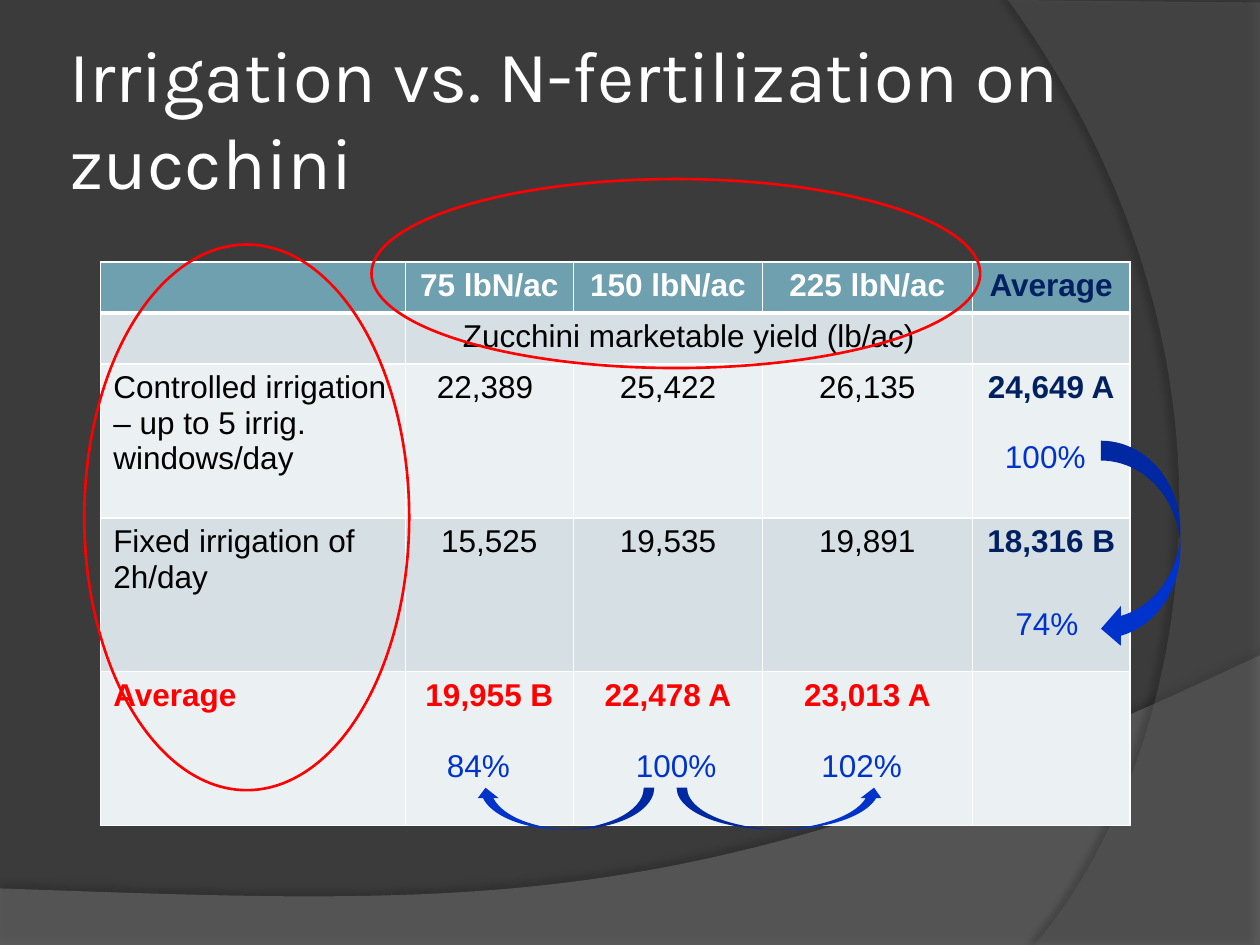
from pptx import Presentation, util as u
from pptx.dml import color
from pptx.enum import shapes, text
from pptx.oxml import parse_xml

SPACE = 'xmlns:a="http://schemas.openxmlformats.org/drawingml/2006/main"'
BLUE, RED, NAVY, BLACK, WHITE = "0033CC", "FF0000", "002060", "000000", "FFFFFF"
HEADER, DARK_BAND, LIGHT_BAND = "6EA0B0", "D5DFE4", "EBF0F2"


def rgb(value):
    """Turn a hex string into a colour."""
    return color.RGBColor.from_string(value)


def paint(fill, value):
    """Make a fill solid in one colour."""
    fill.solid()
    fill.fore_color.rgb = rgb(value)


def write(frame, words, ink, align=text.PP_ALIGN.LEFT, **formats):
    """Write one formatted span into a text frame."""
    para = frame.paragraphs[0]
    para.alignment = align
    span = para.add_run()
    span.text = words
    settings = {"name": "Arial", "size": u.Pt(18), "bold": False, **formats}
    for key, value in settings.items():
        setattr(span.font, key, value)
    span.font.color.rgb = rgb(ink)


def curve(start, first, second, end, steps=60):
    """Return points along a cubic curve, without its start."""
    points = []
    for step in range(1, steps + 1):
        t = step / steps
        weights = ((1 - t) ** 3, 3 * t * (1 - t) ** 2, 3 * t * t * (1 - t), t ** 3)
        points.append(tuple(
            sum(w * p[axis] for w, p in zip(weights, (start, first, second, end)))
            for axis in (0, 1)))
    return points


def add_swoosh(page, points, ink, opacity, shade, angle):
    """Draw a translucent background outline with a soft shadow."""
    start, *rest = [(u.Cm(x), u.Cm(y)) for x, y in points]
    builder = page.shapes.build_freeform(*start)
    builder.add_line_segments(rest, close=True)
    swoosh = builder.convert_to_shape()
    paint(swoosh.fill, ink)
    swoosh.line.fill.background()
    tint = swoosh.element.spPr.find(".//{*}solidFill/{*}srgbClr")
    tint.append(parse_xml(f'<a:alpha {SPACE} val="{opacity * 1000}"/>'))
    swoosh.element.spPr.append(parse_xml(
        f'<a:effectLst {SPACE}><a:outerShdw blurRad="{u.Pt(4)}" dist="{u.Pt(4)}" '
        f'dir="{angle * 60000}" algn="ctr" rotWithShape="0"><a:srgbClr val="{BLACK}">'
        f'<a:alpha val="{shade * 1000}"/></a:srgbClr></a:outerShdw></a:effectLst>'))


def add_backdrop(page, width, height):
    """Paint the background and its two swooshes."""
    paint(page.background.fill, "3B3B3B")
    right, left = (width, 13.21), (0, 17.91)
    wave = curve(right, (14.2, 18.52), (9.93, 18.26), left)
    add_swoosh(page, [left, (0, height), (width, height), right, *wave],
               "7F7F7F", 45, 35, 270)
    foot, top = (20.85, height), (20.32, 0)
    arc = curve(foot, (23.75, 15.72), (25.86, 7.62), top)
    add_swoosh(page, [(width, 0.05), (width, height), foot, *arc],
               "5E5E5E", 40, 45, 180)


def add_title(page, left, top, width, height):
    """Place the slide title."""
    box = page.shapes.add_textbox(*map(u.Cm, (left, top, width, height)))
    frame = box.text_frame
    settings = {"word_wrap": True, "vertical_anchor": text.MSO_ANCHOR.MIDDLE}
    settings.update({f"margin_{side}": u.Cm(0.13)
                     for side in ("left", "top", "right", "bottom")})
    for key, value in settings.items():
        setattr(frame, key, value)
    write(frame, "Irrigation vs. N-fertilization on zucchini", WHITE,
          name="Karla", size=u.Pt(41.4))


def add_borders(cell, top, bottom):
    """Give a cell white borders, with its own top and bottom widths."""
    widths = {"L": 1, "R": 1, "T": top, "B": bottom}
    properties = cell._tc.get_or_add_tcPr()
    for place, (side, width) in enumerate(widths.items()):
        properties.insert(place, parse_xml(
            f'<a:ln{side} {SPACE} w="{u.Pt(width)}"><a:solidFill>'
            f'<a:srgbClr val="{WHITE}"/></a:solidFill></a:ln{side}>'))


def add_yield_table(page, left, top):
    """Place the yield table with its averages."""
    rows = [
        ("", "75 lbN/ac", "150 lbN/ac", "225 lbN/ac", "Average"),
        ("", "Zucchini marketable yield (lb/ac)", "", "", ""),
        ("Controlled irrigation – up to 5 irrig. windows/day",
         "22,389 ", "25,422", "26,135", "24,649 A"),
        ("Fixed irrigation of 2h/day", "15,525", "19,535", "19,891", "18,316 B"),
        ("Average", "19,955 B", "22,478 A", "23,013 A", ""),
    ]
    widths = (6.14, 3.39, 3.81, 4.23, 3.18)
    heights = (1.03, 1.03, 3.1, 3.1, 3.1)
    table = page.shapes.add_table(
        len(rows), len(widths),
        *map(u.Cm, (left, top, sum(widths), sum(heights)))).table
    for column, width in zip(table.columns, widths):
        column.width = u.Cm(width)
    for row, height in zip(table.rows, heights):
        row.height = u.Cm(height)
    last_row, last_column = len(rows) - 1, len(widths) - 1
    for r, words in enumerate(rows):
        for c, word in enumerate(words):
            cell = table.cell(r, c)
            paint(cell.fill, HEADER if r == 0 else (LIGHT_BAND, DARK_BAND)[r % 2])
            add_borders(cell, 3 if r == 1 else 1, 3 if r == 0 else 1)
            if not word:
                continue
            if c == last_column:
                ink = NAVY
            else:
                ink = {0: WHITE, last_row: RED}.get(r, BLACK)
            write(cell.text_frame, word, ink,
                  text.PP_ALIGN.CENTER if c else text.PP_ALIGN.LEFT,
                  bold=ink != BLACK)
    table.cell(1, 1).merge(table.cell(1, 3))


def add_percent(page, words, left, top, width):
    """Place one relative yield label."""
    box = page.shapes.add_textbox(*map(u.Cm, (left, top, width, 1.02)))
    box.text_frame.word_wrap = False
    write(box.text_frame, words, BLUE)


def add_arrow(page, left, top, width, height, flip=None, rotation=0):
    """Place a curved comparison arrow."""
    arrow = page.shapes.add_shape(shapes.MSO_SHAPE.CURVED_UP_ARROW,
                                  *map(u.Cm, (left, top, width, height)))
    arrow.shadow.inherit = False
    paint(arrow.fill, BLUE)
    arrow.line.fill.background()
    arrow.rotation = rotation
    if flip:
        arrow.element.spPr.xfrm.set(flip, "1")


def add_comparisons(page, left, top):
    """Place the percentages and their arrows over the table."""
    for x in (11.61, 7.55):
        width = 4.19 if x > 10 else 3.61
        add_arrow(page, left + x, top + 10.6, width, 0.84,
                  None if x > 10 else "flipH")
    for words, x, y, width in (("84%", 6.73, 9.63, 1.8), ("100%", 10.54, 9.63, 2.16),
                               ("102%", 14.28, 9.63, 2.16), ("100%", 17.98, 3.4, 2.16),
                               ("74%", 18.19, 6.78, 1.8)):
        add_percent(page, words, left + x, top + y, width)
    add_arrow(page, left + 18.87, top + 4.9, 4.19, 1.6, "flipV", 90)


def add_ring(page, left, top, width, height):
    """Place a red outline ellipse."""
    ring = page.shapes.add_shape(shapes.MSO_SHAPE.OVAL,
                                 *map(u.Cm, (left, top, width, height)))
    ring.shadow.inherit = False
    ring.fill.background()
    ring.line.color.rgb = rgb(RED)
    ring.line.width = u.Pt(1.5)


def main():
    """Build and save the slide."""
    width, height = 25.4, 19.05
    deck = Presentation()
    deck.slide_width, deck.slide_height = u.Cm(width), u.Cm(height)
    page = deck.slides.add_slide(deck.slide_layouts[6])
    add_backdrop(page, width, height)
    add_title(page, 1.27, 0.76, 20.75, 3.18)
    left, top = 2.03, 5.28
    add_yield_table(page, left, top)
    add_comparisons(page, left, top)
    add_ring(page, left + 5.46, top - 1.67, 12.27, 3.81)
    add_ring(page, left - 0.33, top - 0.35, 6.55, 11)
    deck.save("out.pptx")


if __name__ == "__main__":
    main()
